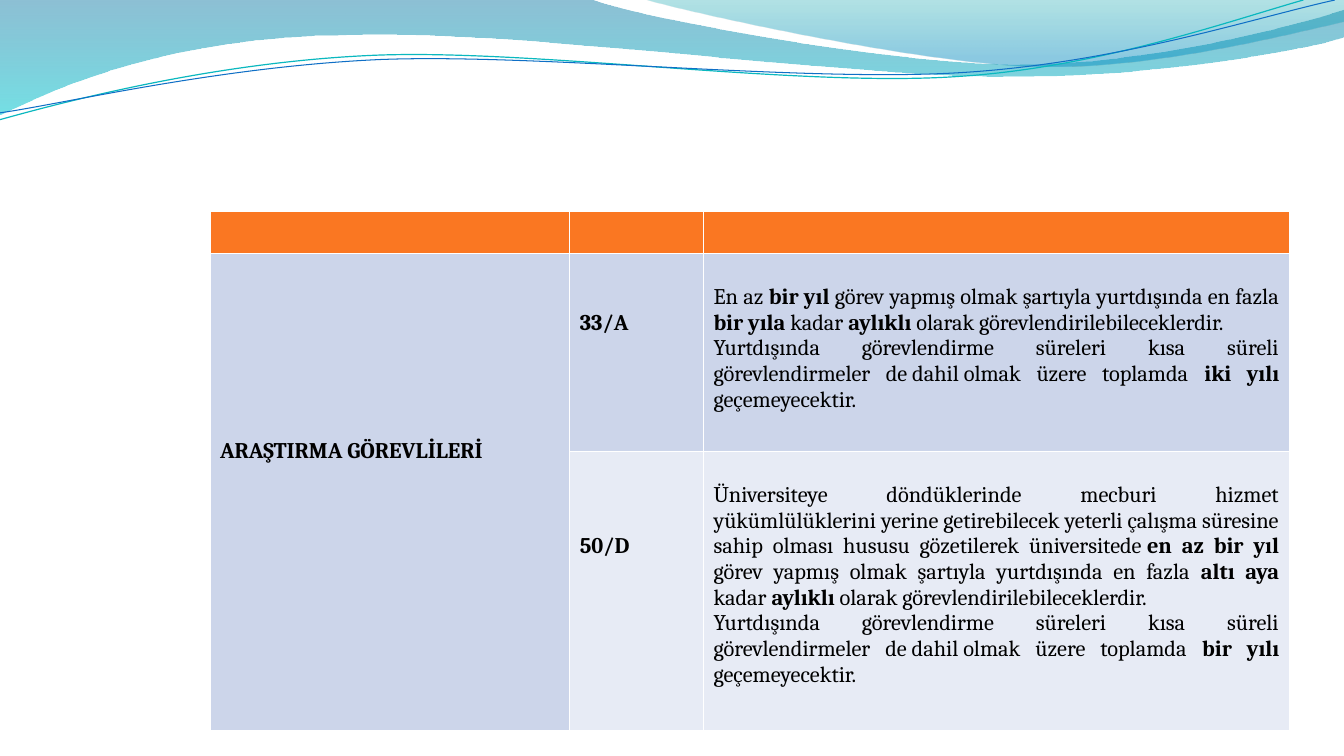
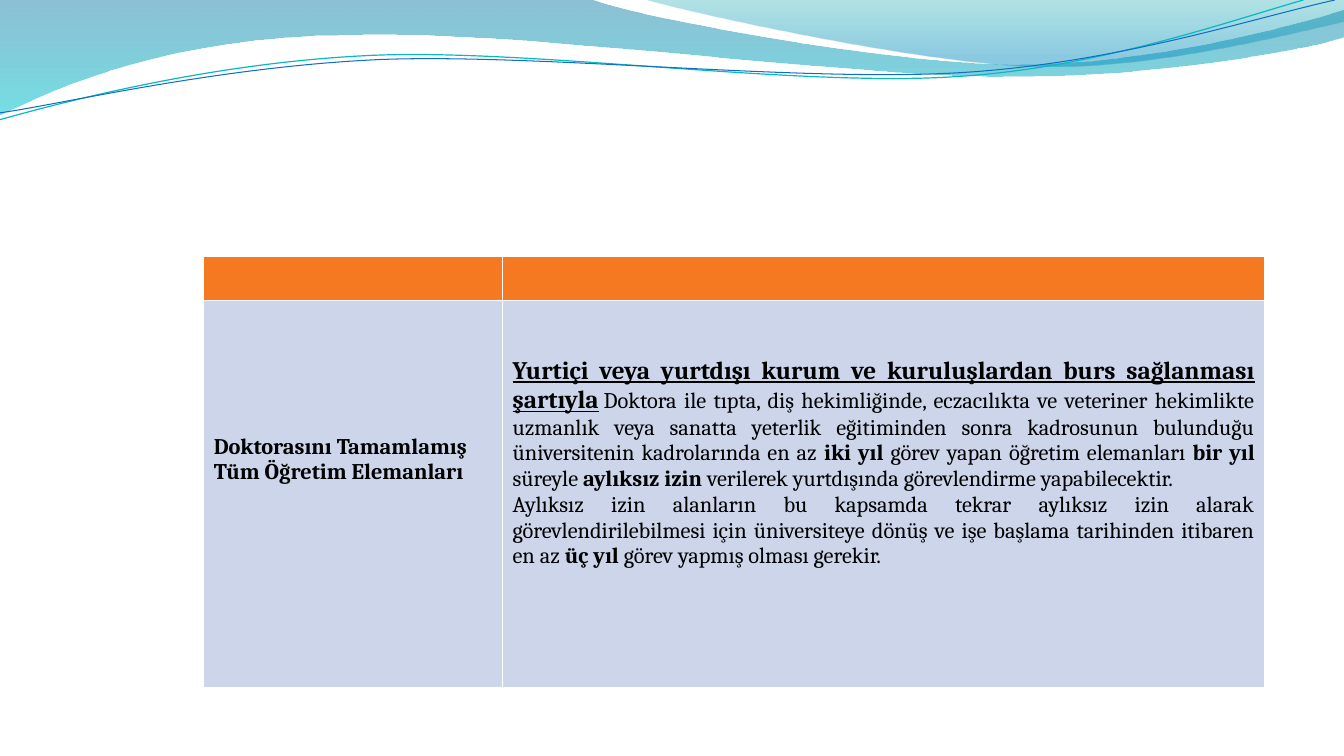
"""Two slides of leave rules in tables, below a shared wave band."""
from dataclasses import dataclass
from itertools import product

from lxml.etree import SubElement as Sub
from pptx import Presentation
from pptx.dml.color import RGBColor as Rgb
from pptx.enum.text import PP_ALIGN as Align
from pptx.oxml.ns import qn
from pptx.util import Pt


@dataclass(frozen=True)
class Theme:
    """Colours, type and measures shared by the slides."""
    font: str = "Cambria"
    size: float = 16
    large: float = 18
    line: float = 18.4
    pad: float = 3.6
    ink: str = "000000"
    rule: str = "FFFFFF"
    blue: str = "CCD5EA"
    pale: str = "E7EBF5"
    teal: str = "0AB8BF"
    navy: str = "0F6FC6"
    band: tuple = ((0, "0074A1", 45), (1, "00C6CF", 55))
    sheen: tuple = ((0, "00A1A9", 30), (0.8, "008BBF", 45))


T = Theme()

BAND = [(0, 0), (422.6, 0),
        (456.5, 12.9, 637.2, 46.1, 727.9, 46.1),
        (819.4, 46.1, 920.2, 19.4, 960, 7.2), (960, 26.8),
        (943.9, 32.4, 835.2, 55.4, 715.7, 54.7),
        (596.9, 54.7, 366.5, 20.9, 247, 25.2),
        (123.1, 26.6, 43.9, 60.5, 0, 81.8)]
SHEEN = [(460, 0), (488.9, 8.6, 654.5, 45.3, 738, 47.5),
         (821.5, 50.4, 923, 23.7, 960, 15.8), (960, 0)]
TEAL = [(0, 85.5), (46.1, 72.7, 151.9, 44.6, 265.7, 39.6),
        (379.4, 34.6, 568.8, 62.6, 684, 54.7),
        (782.6, 48.5, 871.7, 17.1, 931, 0)]
NAVY = [(0, 80.6), (45.4, 74.2, 157, 47.5, 272.2, 42.5),
        (386.6, 38.2, 573.1, 59, 687.6, 51.8),
        (798.9, 44.9, 895.6, 12.8, 953.5, 0)]

TERM = ("Yurtdışında görevlendirme süreleri kısa süreli görevlendirmeler "
        "de~dahil~olmak üzere toplamda *{} yılı *geçemeyecektir.")
PAID = ("görev yapmış olmak şartıyla yurtdışında en fazla *{} *kadar "
        "*aylıklı* olarak görevlendirilebileceklerdir.")
RULE_A = ["En az *bir yıl *" + PAID.format("bir yıla"), TERM.format("iki")]
RULE_D = ["Üniversiteye döndüklerinde mecburi hizmet yükümlülüklerini yerine "
          "getirebilecek yeterli çalışma süresine sahip olması hususu "
          "gözetilerek üniversitede~*en az bir yıl *"
          + PAID.format("altı aya"), TERM.format("bir")]
UNPAID = ["_Yurtiçi veya yurtdışı kurum ve kuruluşlardan burs sağlanması "
          "şartıyla_~Doktora ile tıpta, diş hekimliğinde, eczacılıkta ve "
          "veteriner hekimlikte uzmanlık veya sanatta yeterlik eğitiminden "
          "sonra kadrosunun bulunduğu üniversitenin kadrolarında en az "
          "*iki yıl *görev yapan öğretim elemanları *bir yıl *süreyle "
          "*aylıksız izin *verilerek yurtdışında görevlendirme "
          "yapabilecektir.",
          "Aylıksız izin alanların bu kapsamda tekrar aylıksız izin alarak "
          "görevlendirilebilmesi için üniversiteye dönüş ve işe başlama "
          "tarihinden itibaren en az *üç yıl *görev yapmış olması gerekir."]


def bend(shape, path):
    """Join each three lines that stand for a curve into one."""
    lines = iter(list(shape.element.iter(qn("a:lnTo"))))
    for part in path[1:]:
        curve = next(lines)
        if len(part) == 6:
            for _ in range(2):
                extra = next(lines)
                curve.append(extra[0])
                extra.getparent().remove(extra)
            curve.tag = qn("a:cubicBezTo")


def outline(slide, path, close):
    """Draw a path of lines and cubic curves as a freeform."""
    start, *rest = [(Pt(x), Pt(y)) for part in path
                    for x, y in zip(part[::2], part[1::2])]
    pen = slide.shapes.build_freeform(*start, scale=1.0)
    pen.add_line_segments(rest, close=close)
    shape = pen.convert_to_shape()
    bend(shape, path)
    shape.shadow.inherit = False
    return shape


def wash(slide, path, stops):
    """Draw a closed wave with a clear gradient running down."""
    shape = outline(slide, path, True)
    shape.line.fill.background()
    shape.fill.gradient()
    shape.fill.gradient_angle = 270
    for stop, (place, tint, _) in zip(shape.fill.gradient_stops, stops):
        stop.position = place
        stop.color.rgb = Rgb.from_string(tint)
    tints = shape.element.iter(qn("a:srgbClr"))
    for tint, (_, _, alpha) in zip(list(tints), stops):
        Sub(tint, qn("a:alpha"), val=str(alpha * 1000))
    return shape


def stroke(slide, path, tint, width):
    """Draw an open wave line."""
    shape = outline(slide, path, False)
    shape.fill.background()
    shape.line.color.rgb = Rgb.from_string(tint)
    shape.line.width = Pt(width)
    return shape


def waves(slide, master):
    """Draw the waves and hand them to the master."""
    parts = [wash(slide, BAND, T.band),
             wash(slide, SHEEN, T.sheen),
             stroke(slide, TEAL, T.teal, 0.85),
             stroke(slide, NAVY, T.navy, 0.75)]
    for num, shape in enumerate(parts, 20):
        next(shape.element.iter(qn("p:cNvPr"))).set("id", str(num))
        master.shapes.element.append(shape.element)


def paint(cell, tint):
    """Give a cell its rules and fill."""
    props = cell._tc.get_or_add_tcPr()
    for side in "LRTB":
        edge = Sub(props, qn("a:ln" + side), w=str(Pt(1)))
        Sub(Sub(edge, qn("a:solidFill")), qn("a:srgbClr"), val=T.rule)
    cell.fill.solid()
    cell.fill.fore_color.rgb = Rgb.from_string(tint)


def style(para, bold=False):
    """Set the font of a paragraph."""
    font = para.font
    font.name, font.size, font.bold = T.font, Pt(T.size), bold
    font.color.rgb = Rgb.from_string(T.ink)


def mark(para, text):
    """Add runs: stars make bold, low lines a lead, tildes fixed spaces."""
    for spot, piece in enumerate(text.replace("~", chr(160)).split("_")):
        lead = spot % 2 == 1
        for odd, words in enumerate(piece.split("*")):
            if not words:
                continue
            run = para.add_run()
            run.text = words
            if lead or odd % 2:
                run.font.bold = True
            if lead:
                run.font.underline = True
                run.font.size = Pt(T.large)


def label(cell, text, drop):
    """Write a bold label some lines down the cell."""
    cell.margin_top = Pt(T.pad + drop * T.line)
    para = cell.text_frame.paragraphs[0]
    para.text = text
    style(para, True)


def prose(cell, texts, drop):
    """Write justified paragraphs some lines down the cell."""
    cell.margin_top = Pt(T.pad + drop * T.line)
    frame = cell.text_frame
    for num, text in enumerate(texts):
        para = frame.add_paragraph() if num else frame.paragraphs[0]
        para.alignment = Align.JUSTIFY
        style(para)
        mark(para, text)


def grid(slide, left, top, cols, rows, tints):
    """Add a table with one fill for each row."""
    table = slide.shapes.add_table(
        len(rows), len(cols), Pt(left), Pt(top),
        Pt(sum(cols)), Pt(sum(rows))).table
    table.horz_banding = False
    for col, width in zip(table.columns, cols):
        col.width = Pt(width)
    for row, height in zip(table.rows, rows):
        row.height = Pt(height)
    for row, col in product(range(len(rows)), range(len(cols))):
        paint(table.cell(row, col), tints[row])
    return table


def staff(slide):
    """Fill the slide on research assistants."""
    table = grid(slide, 150, 151, (257, 95.5, 418.5), (30, 141.5, 199.5),
                 ("FA7722", T.blue, T.pale))
    table.cell(1, 0).merge(table.cell(2, 0))
    label(table.cell(1, 0), "ARAŞTIRMA GÖREVLİLERİ", 7)
    label(table.cell(1, 1), "33/A", 2)
    prose(table.cell(1, 2), RULE_A, 1)
    label(table.cell(2, 1), "50/D", 3)
    prose(table.cell(2, 2), RULE_D, 1)


def doctors(slide):
    """Fill the slide on staff with a doctorate."""
    table = grid(slide, 145.5, 183.5, (213.5, 544.5), (31, 276.5),
                 ("F57921", T.blue))
    label(table.cell(1, 0), "Doktorasını Tamamlamış Tüm Öğretim Elemanları", 5)
    prose(table.cell(1, 1), UNPAID, 2)


def main():
    """Build and save the slides."""
    deck = Presentation()
    deck.slide_width, deck.slide_height = Pt(960), Pt(540)
    blank = deck.slide_layouts[6]
    first, second = (deck.slides.add_slide(blank) for _ in range(2))
    waves(first, deck.slide_master)
    staff(first)
    doctors(second)
    deck.save("out.pptx")


if __name__ == "__main__":
    main()
